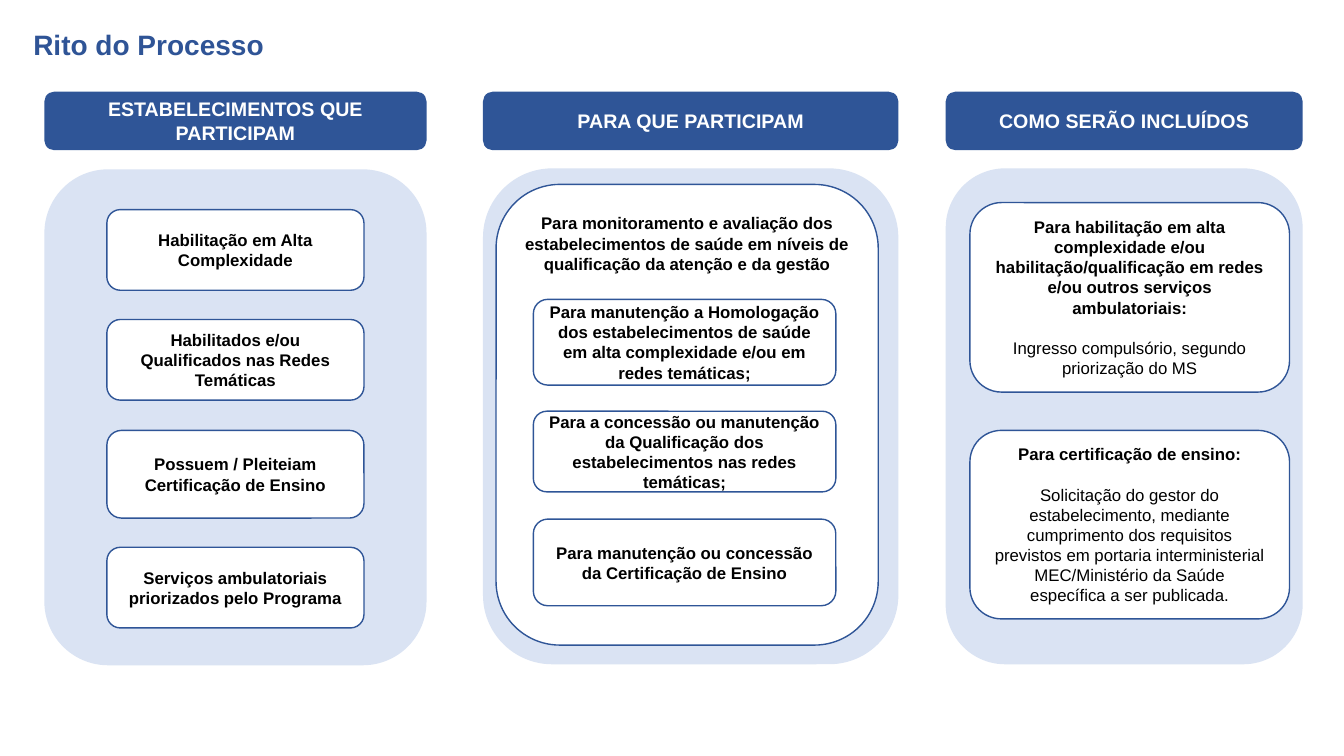
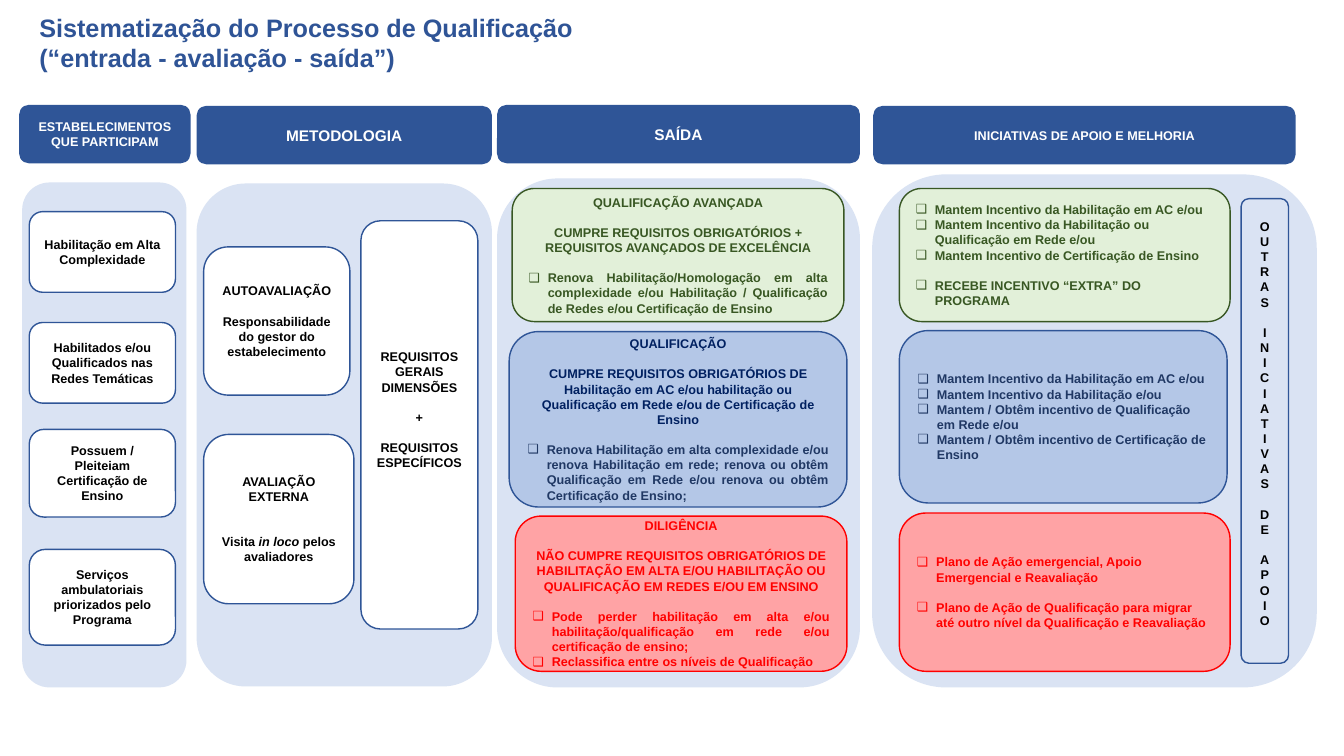
from dataclasses import dataclass
from typing import Any, NamedTuple, Optional

from lxml.etree import SubElement
from pptx import Presentation
from pptx.dml.color import RGBColor
from pptx.enum.shapes import MSO_SHAPE
from pptx.enum.text import MSO_ANCHOR, MSO_AUTO_SIZE, PP_ALIGN
from pptx.oxml.ns import qn
from pptx.util import Emu, Pt

EMU_PER_PX = 9144
FONT = "Arial"
LINE_HEIGHT = 1.2
BULLET = "❑"
BULLET_INDENT = 19
TITLE_COLOUR = "2F5496"


class Look(NamedTuple):
    fill: Optional[str]
    line: Optional[str]
    ink: str


class Box(NamedTuple):
    left: int
    top: int
    width: int
    height: int


class Line(NamedTuple):
    text: str
    gap: int = 0
    bold: bool = True
    bullet: bool = False
    align: Any = PP_ALIGN.CENTER
    ink: Optional[str] = None


@dataclass
class Card:
    box: Box
    look: Look
    lines: tuple[Line, ...] = ()
    size: int = 9
    anchor: Any = MSO_ANCHOR.MIDDLE
    margin_top: int = 5
    margin_bottom: int = 5


HEADER = Look("2F5597", None, "FFFFFF")
PANEL = Look("DAE3F3", None, "000000")
WHITE = Look("FFFFFF", "2F5597", "000000")
OUTLINE = Look(None, "2F5597", "000000")
GREEN = Look("E2F0D9", "385723", "385723")
BLUE = Look("B4C7E7", "2F5597", "203864")
RED = Look("FFA3A5", "FF0000", "FF0000")
NAVY = "002060"

ESTABLISHMENTS = (
    "Habilitação em Alta Complexidade",
    "Habilitados e/ou Qualificados nas Redes Temáticas",
    "Possuem / Pleiteiam Certificação de Ensino",
    "Serviços ambulatoriais priorizados pelo Programa",
)


def px(length: int) -> Emu:
    return Emu(length * EMU_PER_PX)


def rgb(colour: str) -> RGBColor:
    return RGBColor.from_string(colour)


def apply(target: Any, values: dict[str, Any]) -> None:
    for name, value in values.items():
        setattr(target, name, value)


def format_font(font: Any, size: int, colour: str, bold: bool = True, italic: bool = False) -> None:
    apply(font, {"name": FONT, "size": Pt(size), "bold": bold, "italic": italic})
    font.color.rgb = rgb(colour)


def add_bullet(paragraph: Any) -> None:
    properties = paragraph._p.get_or_add_pPr()
    properties.set("marL", str(px(BULLET_INDENT)))
    properties.set("indent", str(-px(BULLET_INDENT)))
    SubElement(properties, qn("a:buFont")).set("typeface", FONT)
    SubElement(properties, qn("a:buChar")).set("char", BULLET)


def write_lines(text_frame: Any, lines: tuple[Line, ...], size: int, colour: str) -> None:
    for index, line in enumerate(lines):
        paragraph = text_frame.add_paragraph() if index else text_frame.paragraphs[0]
        if line.bullet:
            add_bullet(paragraph)
        space = Pt(round(line.gap * size * LINE_HEIGHT, 1))
        apply(paragraph, {"alignment": line.align, "space_before": space})
        for part, text in enumerate(line.text.split("*")):
            run = paragraph.add_run()
            run.text = text
            format_font(run.font, size, line.ink or colour, line.bold, part % 2 == 1)


def add_card(slide: Any, card: Card) -> None:
    shape = slide.shapes.add_shape(MSO_SHAPE.ROUNDED_RECTANGLE, *map(px, card.box))
    shape.shadow.inherit = False
    if card.look.fill:
        shape.fill.solid()
        shape.fill.fore_color.rgb = rgb(card.look.fill)
    else:
        shape.fill.background()
    if card.look.line:
        shape.line.color.rgb = rgb(card.look.line)
        shape.line.width = Pt(1)
    else:
        shape.line.fill.background()
    apply(shape.text_frame, {
        "word_wrap": True,
        "vertical_anchor": card.anchor,
        "margin_top": px(card.margin_top),
        "margin_bottom": px(card.margin_bottom),
    })
    write_lines(shape.text_frame, card.lines, card.size, card.look.ink)


def add_slide(presentation: Any, title_lines: tuple[str, ...], box: Box, size: int, cards: list[Card]) -> None:
    slide = presentation.slides.add_slide(presentation.slide_layouts[5])
    title = slide.shapes.title
    apply(title, dict(zip(("left", "top", "width", "height"), map(px, box))))
    apply(title.text_frame, {
        "word_wrap": True,
        "auto_size": MSO_AUTO_SIZE.NONE,
        "vertical_anchor": MSO_ANCHOR.TOP,
    })
    lines = tuple(Line(text, align=PP_ALIGN.LEFT) for text in title_lines)
    write_lines(title.text_frame, lines, size, TITLE_COLOUR)
    for card in cards:
        add_card(slide, card)


def column(header: str, header_box: Box, panel_box: Box, size: int) -> list[Card]:
    return [Card(header_box, HEADER, (Line(header),), size), Card(panel_box, PANEL)]


def stack(left: int, width: int, top: int, bottom: int, heights: tuple[int, ...], texts: tuple[str, ...]) -> list[Card]:
    gap = (bottom - top - sum(heights)) / (len(heights) - 1)
    return [
        Card(Box(left, round(top + sum(heights[:index]) + index * gap), width, height), WHITE, (Line(text),), 12)
        for index, (height, text) in enumerate(zip(heights, texts))
    ]


def bullet(text: str, gap: int = 0, align: Any = PP_ALIGN.LEFT) -> Line:
    return Line(text, gap, bullet=True, align=align)


def justified(text: str, gap: int = 0) -> Line:
    return bullet(text, gap, PP_ALIGN.JUSTIFY)


def process_cards() -> list[Card]:
    purposes = (
        "Para manutenção a Homologação dos estabelecimentos de saúde em alta complexidade e/ou em redes temáticas;",
        "Para a concessão ou manutenção da Qualificação dos estabelecimentos nas redes temáticas;",
        "Para manutenção ou concessão da Certificação de Ensino",
    )
    monitoring = Line(
        "Para monitoramento e avaliação dos estabelecimentos de saúde em níveis de qualificação da atenção e da gestão"
    )
    accreditation = (
        Line("Para habilitação em alta complexidade e/ou habilitação/qualificação em redes e/ou outros serviços ambulatoriais:"),
        Line("Ingresso compulsório, segundo priorização do MS", gap=1, bold=False),
    )
    teaching = (
        Line("Para certificação de ensino:"),
        Line("Solicitação do gestor do estabelecimento, mediante cumprimento dos requisitos", gap=1, bold=False),
        Line("previstos em portaria interministerial MEC/Ministério da Saúde", bold=False),
        Line("específica a ser publicada.", bold=False),
    )
    return [
        *column("ESTABELECIMENTOS QUE PARTICIPAM", Box(44, 91, 379, 58), Box(44, 168, 379, 492), 14),
        *column("PARA QUE PARTICIPAM", Box(479, 91, 412, 58), Box(479, 167, 412, 492), 14),
        *column("COMO SERÃO INCLUÍDOS", Box(938, 91, 354, 58), Box(938, 167, 354, 492), 14),
        *stack(106, 255, 208, 623, (80, 80, 87, 80), ESTABLISHMENTS),
        Card(Box(492, 183, 379, 457), WHITE, (monitoring,), 12, MSO_ANCHOR.TOP, margin_top=10),
        *stack(529, 300, 297, 601, (85, 80, 86), purposes),
        Card(Box(962, 201, 317, 188), WHITE, accreditation, 12),
        Card(Box(962, 427, 317, 187), WHITE, teaching, 12),
    ]


def qualification_cards() -> list[Card]:
    establishment_rows = ((210, 80), (320, 80), (426, 87), (545, 95))
    establishments = [
        Card(Box(29, top, 145, height), WHITE, (Line(text),))
        for (top, height), text in zip(establishment_rows, ESTABLISHMENTS)
    ]
    self_assessment = (
        Line("AUTOAVALIAÇÃO"),
        Line("Responsabilidade do gestor do estabelecimento", gap=1),
    )
    external_assessment = (
        Line("AVALIAÇÃO EXTERNA"),
        Line("Visita *in loco* pelos avaliadores", gap=2),
    )
    requirements = (
        Line("REQUISITOS GERAIS"),
        Line("DIMENSÕES"),
        Line("+", gap=1),
        Line("REQUISITOS ESPECÍFICOS", gap=1),
    )
    advanced = (
        Line("QUALIFICAÇÃO AVANÇADA"),
        Line("CUMPRE REQUISITOS OBRIGATÓRIOS + REQUISITOS AVANÇADOS DE EXCELÊNCIA", gap=1),
        justified("Renova Habilitação/Homologação em alta complexidade e/ou Habilitação / Qualificação de Redes e/ou Certificação de Ensino", 1),
    )
    qualified = (
        Line("QUALIFICAÇÃO", ink=NAVY),
        Line("CUMPRE REQUISITOS OBRIGATÓRIOS DE Habilitação em AC e/ou habilitação ou Qualificação em Rede e/ou de Certificação de Ensino", gap=1, ink=NAVY),
        justified("Renova Habilitação em alta complexidade e/ou renova Habilitação em rede; renova ou obtêm Qualificação em Rede e/ou renova ou obtêm Certificação de Ensino;", 1),
    )
    diligence = (
        Line("DILIGÊNCIA"),
        Line("NÃO CUMPRE REQUISITOS OBRIGATÓRIOS DE HABILITAÇÃO EM ALTA E/OU HABILITAÇÃO OU QUALIFICAÇÃO EM REDES E/OU EM ENSINO", gap=1),
        justified("Pode perder habilitação em alta e/ou habilitação/qualificação em rede e/ou certificação de ensino;", 1),
        justified("Reclassifica entre os níveis de Qualificação"),
    )
    advanced_support = (
        bullet("Mantem Incentivo da Habilitação em AC e/ou"),
        bullet("Mantem Incentivo da Habilitação ou Qualificação em Rede e/ou"),
        bullet("Mantem Incentivo de Certificação de Ensino"),
        bullet("RECEBE INCENTIVO “EXTRA” DO PROGRAMA", 1),
    )
    qualified_support = (
        bullet("Mantem Incentivo da Habilitação em AC e/ou"),
        bullet("Mantem Incentivo da Habilitação e/ou"),
        bullet("Mantem / Obtêm incentivo de Qualificação em Rede e/ou"),
        bullet("Mantem / Obtêm incentivo de Certificação de Ensino"),
    )
    diligence_support = (
        bullet("Plano de Ação emergencial, Apoio Emergencial e Reavaliação"),
        bullet("Plano de Ação de Qualificação para migrar até outro nível da Qualificação e Reavaliação", 1),
    )
    other_initiatives = tuple(
        Line(letter, gap=int(word_index > 0 and letter_index == 0))
        for word_index, word in enumerate("OUTRAS INICIATIVAS DE APOIO".split())
        for letter_index, letter in enumerate(word)
    )
    return [
        *column("ESTABELECIMENTOS QUE PARTICIPAM", Box(19, 104, 170, 58), Box(22, 181, 163, 501), 9),
        *column("METODOLOGIA", Box(195, 105, 293, 58), Box(195, 182, 293, 499), 11),
        *column("SAÍDA", Box(493, 104, 360, 58), Box(493, 177, 360, 505), 11),
        *column("INICIATIVAS DE APOIO E MELHORIA", Box(866, 105, 419, 58), Box(865, 173, 441, 509), 9),
        *establishments,
        Card(Box(202, 245, 145, 147), WHITE, self_assessment),
        Card(Box(202, 431, 149, 168), WHITE, external_assessment),
        Card(Box(358, 219, 116, 405), WHITE, requirements, margin_bottom=35),
        Card(Box(508, 187, 329, 132), GREEN, advanced),
        Card(Box(505, 329, 335, 174), BLUE, qualified),
        Card(Box(511, 512, 329, 154), RED, diligence),
        Card(Box(892, 187, 328, 132), GREEN, advanced_support),
        Card(Box(892, 328, 325, 171), BLUE, qualified_support),
        Card(Box(892, 509, 328, 157), RED, diligence_support),
        Card(Box(1231, 197, 47, 461), OUTLINE, other_initiatives, margin_bottom=20),
    ]


def main() -> None:
    presentation = Presentation()
    apply(presentation, {"slide_width": px(1333), "slide_height": px(750)})
    add_slide(presentation, ("Rito do Processo",), Box(23, 22, 1026, 44), 20, process_cards())
    add_slide(
        presentation,
        ("Sistematização do Processo de Qualificação", "(“entrada - avaliação - saída”)"),
        Box(29, 7, 654, 71), 18, qualification_cards(),
    )
    presentation.save("out.pptx")


if __name__ == "__main__":
    main()
